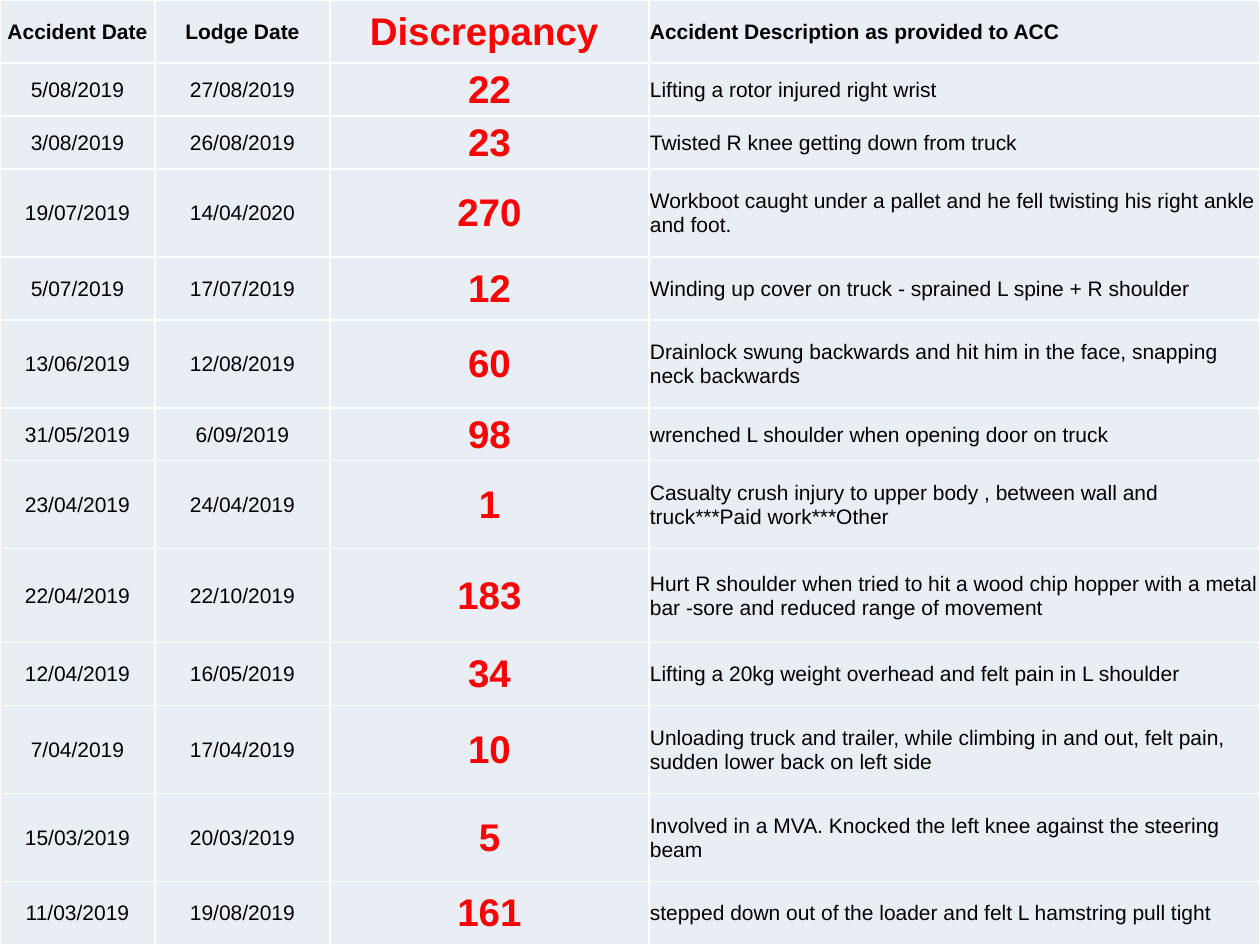
from dataclasses import dataclass

from lxml import etree
from pptx import Presentation
from pptx.dml.color import RGBColor
from pptx.enum.text import MSO_ANCHOR, PP_ALIGN
from pptx.oxml.ns import qn
from pptx.util import Pt

CENTER, LEFT = PP_ALIGN.CENTER, PP_ALIGN.LEFT
MIDDLE = MSO_ANCHOR.MIDDLE
PX = 914400 // 126


@dataclass(frozen=True)
class Theme:
    font: str = "Arial"
    text: RGBColor = RGBColor(0, 0, 0)
    highlight: RGBColor = RGBColor(255, 0, 0)
    cell_fill: RGBColor = RGBColor(0xE9, 0xED, 0xF4)
    border: str = "FFFFFF"
    body_size: int = 12
    highlight_size: int = 22


THEME = Theme()
SLIDE_WIDTH, SLIDE_HEIGHT = 1260, 945
COLUMN_WIDTHS = [155, 175, 319, 611]
DISCREPANCY, DESCRIPTION = 2, 3

HEADER = ("Accident Date", "Lodge Date", "Discrepancy ",
          "Accident Description as provided to ACC")
HEADER_HEIGHT = 63

# Row height, accident date, lodge date, days between, description
ACCIDENTS = [
    (53, "5/08/2019", "27/08/2019", 22, "Lifting a rotor injured right wrist"),
    (53, "3/08/2019", "26/08/2019", 23, "Twisted R knee getting down from truck"),
    (88, "19/07/2019", "14/04/2020", 270,
     "Workboot caught under a pallet and he fell twisting his right ankle and foot."),
    (63, "5/07/2019", "17/07/2019", 12,
     "Winding up cover on truck - sprained L spine + R shoulder"),
    (88, "13/06/2019", "12/08/2019", 60,
     "Drainlock swung backwards and hit him in the face, snapping neck backwards"),
    (53, "31/05/2019", "6/09/2019", 98,
     "wrenched L shoulder when opening door on truck"),
    (88, "23/04/2019", "24/04/2019", 1,
     "Casualty crush injury to upper body , between wall and truck***Paid work***Other"),
    (94, "22/04/2019", "22/10/2019", 183,
     "Hurt R shoulder when tried to hit a wood chip hopper with a metal bar "
     "-sore and reduced range of movement"),
    (63, "12/04/2019", "16/05/2019", 34,
     "Lifting a 20kg weight overhead and felt pain in L shoulder"),
    (88, "7/04/2019", "17/04/2019", 10,
     "Unloading truck and trailer, while climbing in and out, felt pain, "
     "sudden lower back on left side"),
    (88, "15/03/2019", "20/03/2019", 5,
     "Involved in a MVA. Knocked the left knee against the steering beam"),
    (63, "11/03/2019", "19/08/2019", 161,
     "stepped down out of the loader and felt L hamstring pull tight"),
]


def add_borders(cell):
    """Draw a 1 pt line on all four sides, placed before the cell fill."""
    properties = cell._tc.get_or_add_tcPr()
    for position, side in enumerate(("a:lnL", "a:lnR", "a:lnT", "a:lnB")):
        line = etree.Element(qn(side), w=str(Pt(1)))
        fill = etree.SubElement(line, qn("a:solidFill"))
        etree.SubElement(fill, qn("a:srgbClr"), val=THEME.border)
        properties.insert(position, line)


def fill_cell(cell, text, column, is_header):
    cell.margin_left = cell.margin_right = cell.margin_top = PX
    cell.margin_bottom = 0
    cell.vertical_anchor = MIDDLE
    cell.fill.solid()
    cell.fill.fore_color.rgb = THEME.cell_fill
    add_borders(cell)

    highlighted = column == DISCREPANCY
    paragraph = cell.text_frame.paragraphs[0]
    paragraph.text = str(text)
    paragraph.alignment = LEFT if column == DESCRIPTION else CENTER
    font = paragraph.font
    font.name = THEME.font
    font.size = Pt(THEME.highlight_size if highlighted else THEME.body_size)
    font.bold = is_header or highlighted
    font.color.rgb = THEME.highlight if highlighted else THEME.text


def add_accident_table(slide):
    rows = [(HEADER_HEIGHT, *HEADER), *ACCIDENTS]
    table = slide.shapes.add_table(
        len(rows), len(COLUMN_WIDTHS), 0, 0,
        SLIDE_WIDTH * PX, SLIDE_HEIGHT * PX).table
    table.horz_banding = False
    for column, width in zip(table.columns, COLUMN_WIDTHS):
        column.width = width * PX
    for row_index, (height, *texts) in enumerate(rows):
        table.rows[row_index].height = height * PX
        for column, text in enumerate(texts):
            fill_cell(table.cell(row_index, column), text, column, row_index == 0)


def main():
    presentation = Presentation()
    presentation.slide_width = SLIDE_WIDTH * PX
    presentation.slide_height = SLIDE_HEIGHT * PX
    slide = presentation.slides.add_slide(presentation.slide_layouts[6])
    add_accident_table(slide)
    presentation.save("out.pptx")


if __name__ == "__main__":
    main()
